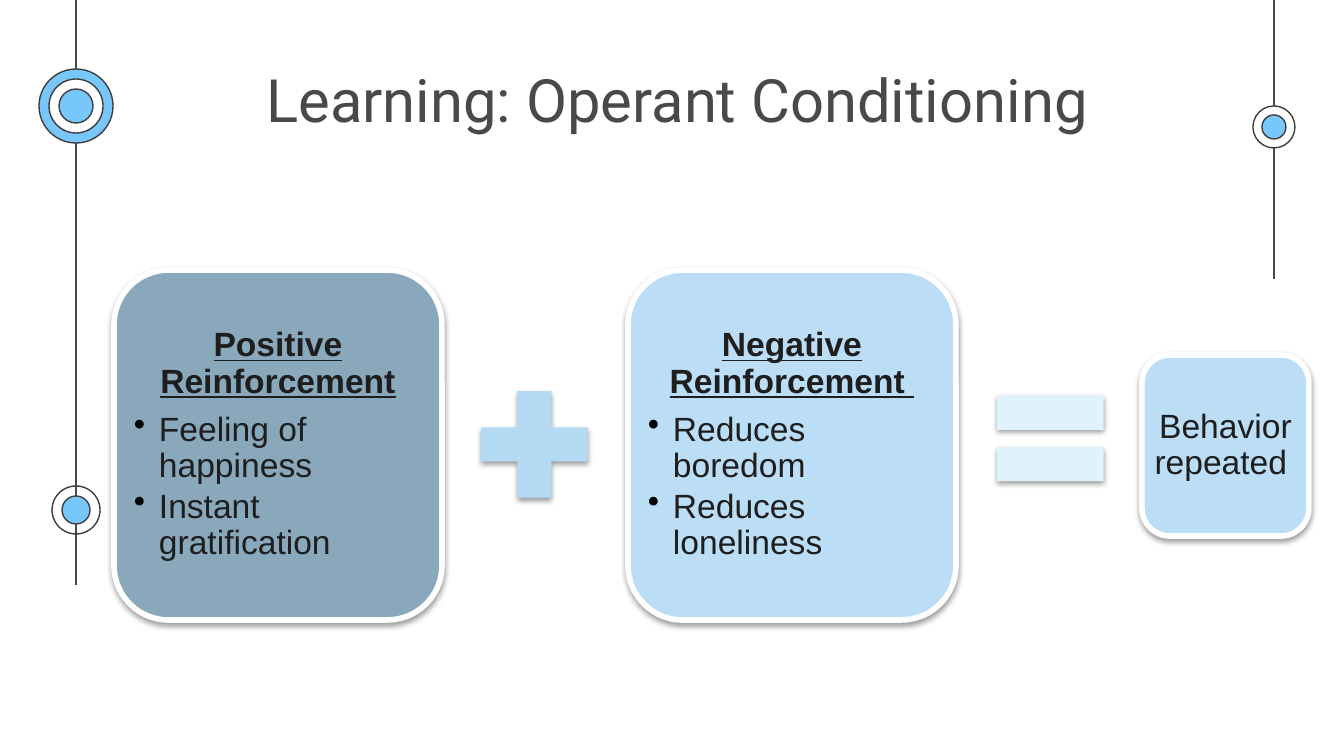
from lxml import etree
from pptx import Presentation
from pptx import util as u
from pptx.dml.color import RGBColor
from pptx.enum import shapes, text
from pptx.oxml.ns import qn

PX = 914400 / 134.4
SLIDE = (1344, 756)
COLORS = {"line": "494949", "ring": "3D3D3D", "dot": "77C6FC", "white": "FFFFFF",
          "slate": "8AA8BC", "sky": "BBDDF5", "plus": "B3D9F3", "equal": "E1F2FF",
          "title": "494949", "body": "1E1E1E", "bullet": "000000"}

# Content
TITLE = ("Learning: Operant Conditioning ", (207, 50, 956, 85))
RAILS = [(76, 585), (1274, 279)]  # x, bottom
TARGETS = [  # centre x, centre y, (radius, fill) from the outside in
    (76, 510, [(24, None), (14, "dot")]),
    (1274, 127, [(21, "white"), (12, "dot")]),
    (76, 106, [(37, "dot"), (27, "white"), (17, "dot")]),
]
CARDS = [  # frame, fill, heading, heading is emphasised, bullets
    ((114, 270, 328, 350), "slate", "Positive Reinforcement", True,
     ["Feeling of happiness", "Instant gratification"]),
    ((628, 270, 328, 350), "sky", "Negative Reinforcement ", True,
     ["Reduces boredom", "Reduces loneliness"]),
    ((1142, 355, 167, 181), "sky", "Behavior repeated ", False, []),
]
OPERATORS = [
    (shapes.MSO_SHAPE.MATH_PLUS, (462, 372, 145, 145), "plus"),
    (shapes.MSO_SHAPE.MATH_EQUAL, (978, 366, 145, 145), "equal"),
]
INDENT = 25


def px(value):
    return u.Emu(round(value * PX))


def color(name):
    return RGBColor.from_string(COLORS[name])


def add_shape(page, kind, frame, fill, line=None, width=0.75):
    shape = page.shapes.add_shape(kind, *map(px, frame))
    shape.shadow.inherit = False
    if fill:
        shape.fill.solid()
        shape.fill.fore_color.rgb = color(fill)
    else:
        shape.fill.background()
    if line:
        shape.line.color.rgb = color(line)
        shape.line.width = u.Pt(width)
    else:
        shape.line.fill.background()
    return shape


def add_shadow(shape):
    effects = shape._element.spPr.find(qn("a:effectLst"))
    shadow = etree.SubElement(effects, qn("a:outerShdw"), blurRad=str(u.Pt(3.1)),
                              dist=str(u.Pt(1.6)), dir="5400000", rotWithShape="0")
    tint = etree.SubElement(shadow, qn("a:srgbClr"), val="000000")
    etree.SubElement(tint, qn("a:alpha"), val="38000")


def add_text_box(page, frame, margin, anchor):
    box = page.shapes.add_textbox(*map(px, frame)).text_frame
    box.word_wrap = True
    box.vertical_anchor = anchor
    box.margin_left = box.margin_right = box.margin_top = box.margin_bottom = px(margin)
    return box


def style(para, font, size, ink, bold=False):
    para.font.name = font
    para.font.size = u.Pt(size)
    para.font.bold = para.font.underline = bold
    para.font.color.rgb = color(ink)


def add_bullet(para):
    para.level = 1
    props = para._p.get_or_add_pPr()
    props.set("marL", str(px(INDENT)))
    props.set("indent", str(-px(INDENT)))
    tint = etree.SubElement(props, qn("a:buClr"))
    etree.SubElement(tint, qn("a:srgbClr"), val=COLORS["bullet"])
    etree.SubElement(props, qn("a:buChar"), char="•")


def add_card(page, frame, fill, heading, emphasised, bullets):
    add_shadow(add_shape(page, shapes.MSO_SHAPE.FLOWCHART_ALTERNATE_PROCESS,
                         frame, fill, "white", 3))
    left, top, width, height = frame
    inset = round(min(width, height) * 0.05)  # keeps text clear of the round corners
    box = add_text_box(page, (left + inset, top + inset, width - 2 * inset,
                              height - 2 * inset), 4, text.MSO_ANCHOR.MIDDLE)
    for index, words in enumerate([heading] + bullets):
        para = box.add_paragraph() if index else box.paragraphs[0]
        para.text = words
        if index:
            add_bullet(para)
        else:
            para.alignment = text.PP_ALIGN.CENTER
        para.line_spacing = 0.9
        para.space_after = u.Pt(2.7 if index else 6.3)
        style(para, "Arial", 18, "body", emphasised and not index)


def main():
    deck = Presentation()
    deck.slide_width, deck.slide_height = map(px, SLIDE)
    page = deck.slides.add_slide(deck.slide_layouts[6])

    # Vertical rails
    for x, bottom in RAILS:
        rail = page.shapes.add_connector(shapes.MSO_CONNECTOR.STRAIGHT,
                                         px(x), px(0), px(x), px(bottom))
        rail.line.color.rgb = color("line")
        rail.line.width = u.Pt(0.75)
        etree.SubElement(rail._element.spPr, qn("a:effectLst"))

    # Concentric circles on the rails
    for x, y, circles in TARGETS:
        for radius, fill in circles:
            add_shape(page, shapes.MSO_SHAPE.OVAL,
                      (x - radius, y - radius, 2 * radius, 2 * radius), fill, "ring")

    # Title
    words, frame = TITLE
    para = add_text_box(page, frame, 13, text.MSO_ANCHOR.TOP).paragraphs[0]
    para.text = words
    para.alignment = text.PP_ALIGN.CENTER
    style(para, "Roboto", 32, "title")

    # Equation: cards joined by operators
    for card in CARDS:
        add_card(page, *card)
    for kind, frame, fill in OPERATORS:
        add_shadow(add_shape(page, kind, frame, fill))

    deck.save("out.pptx")


if __name__ == "__main__":
    main()
